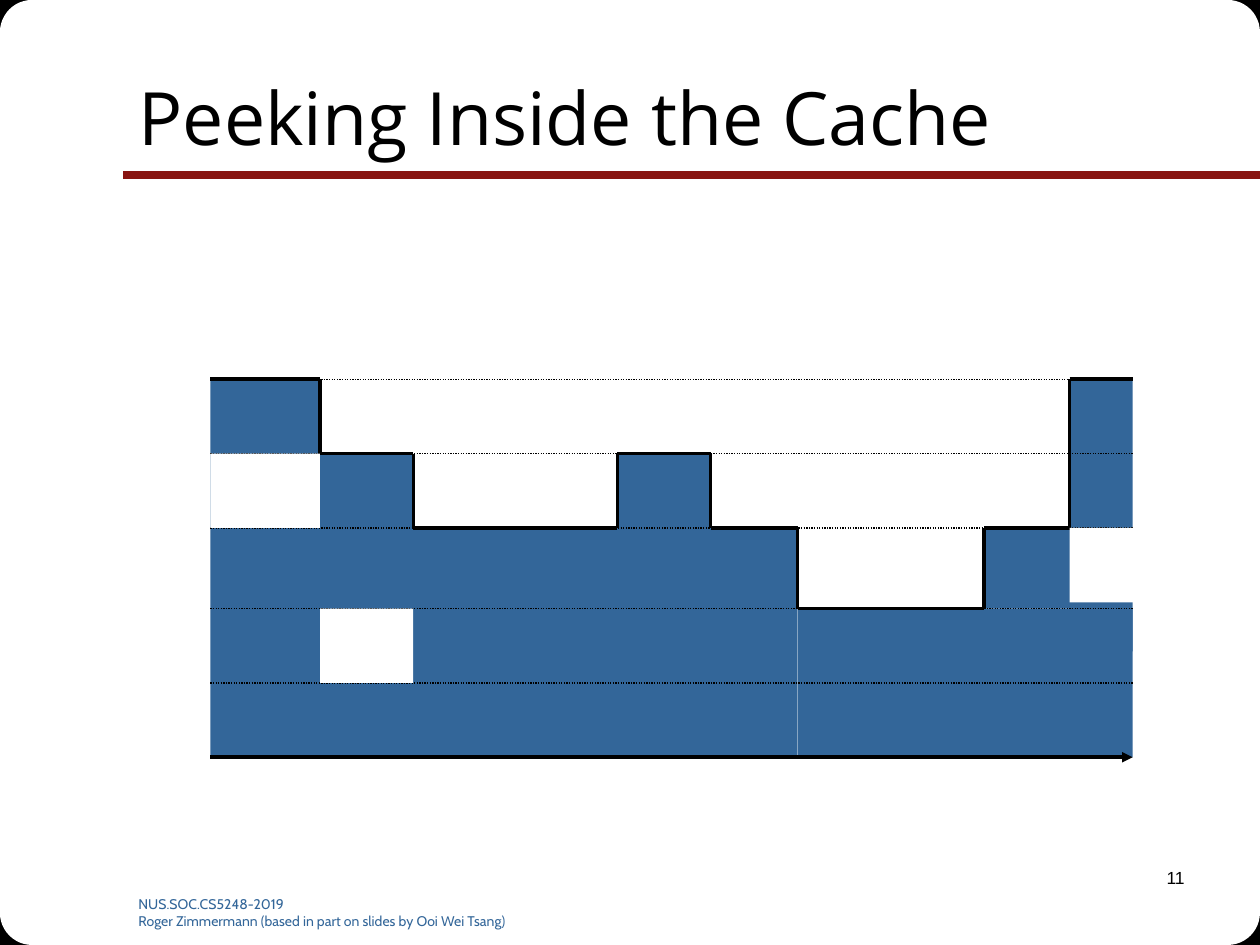
from itertools import pairwise

from lxml.etree import SubElement
from pptx import Presentation
from pptx.dml.color import RGBColor
from pptx.enum.dml import MSO_LINE
from pptx.enum.shapes import MSO_CONNECTOR, MSO_SHAPE
from pptx.enum.text import MSO_ANCHOR, MSO_AUTO_SIZE, PP_ALIGN
from pptx.oxml.ns import qn
from pptx.util import Inches, Pt

BLACK, WHITE, BLUE, RED = "000000", "FFFFFF", "336699", "891411"

presentation = Presentation()
presentation.slide_width = Inches(10)
presentation.slide_height = Inches(7.5)
slide = presentation.slides.add_slide(presentation.slide_layouts[5])


def add_block(shapes, left, top, width, height, color, kind=MSO_SHAPE.RECTANGLE):
    shape = shapes.add_shape(kind, Inches(left), Inches(top), Inches(width), Inches(height))
    shape.shadow.inherit = False
    shape.fill.solid()
    shape.fill.fore_color.rgb = RGBColor.from_string(color)
    shape.line.fill.background()
    return shape


def add_line(shapes, start, end, width, color=BLACK):
    connector = shapes.add_connector(
        MSO_CONNECTOR.STRAIGHT, *(Inches(value) for value in (*start, *end)))
    connector.line.width = Pt(width)
    connector.line.color.rgb = RGBColor.from_string(color)
    SubElement(connector._element.spPr, qn("a:effectLst"))
    return connector


# Black corners, rounded off by white squares
corners = slide.shapes.add_group_shape().shapes
for size, color, kind in ((0.43, BLACK, MSO_SHAPE.RECTANGLE),
                          (1.53, WHITE, MSO_SHAPE.ROUNDED_RECTANGLE)):
    for left in (0, 10 - size):
        for top in (0, 7.5 - size):
            add_block(corners, left, top, size, size, color, kind)

# Title with its rule, in front of the corners
add_line(slide.shapes, (10, 1.39), (0.98, 1.39), 4.5, RED)
title = slide.shapes.title
title.element.getparent().append(title.element)
title.left, title.top = Inches(1), Inches(0.3)
title.width, title.height = Inches(8.5), Inches(1.25)
title.text_frame.text = "Peeking Inside the Cache"
title.text_frame.vertical_anchor = MSO_ANCHOR.MIDDLE
title.text_frame.auto_size = MSO_AUTO_SIZE.NONE

# Footer and slide number
footer = slide.shapes.add_textbox(Inches(1), Inches(7.06), Inches(3.67), Inches(0.28))
footer.text_frame.text = ("NUS.SOC.CS5248-2019\n"
                          "Roger Zimmermann (based in part on slides by Ooi Wei Tsang)")
number = slide.shapes.add_textbox(Inches(7.42), Inches(6.83), Inches(2.08), Inches(0.5))
number.text_frame.text = "11"

for shape, font_name, size, color, alignment in (
        (title, "Open Sans", 42, BLACK, PP_ALIGN.LEFT),
        (footer, "Cabin", 8, BLUE, PP_ALIGN.LEFT),
        (number, "Arial", 10, BLACK, PP_ALIGN.RIGHT)):
    shape.text_frame.word_wrap = True
    for paragraph in shape.text_frame.paragraphs:
        paragraph.alignment = alignment
        paragraph.font.name = font_name
        paragraph.font.size = Pt(size)
        paragraph.font.color.rgb = RGBColor.from_string(color)

# Cached data
cache = slide.shapes.add_group_shape().shapes
LEFT, RIGHT = 1.67, 8.99
LEVELS = (3.01, 3.6, 4.19, 4.83, 5.42)
BOTTOM = 6.01
for left, top, right, bottom in (
        (LEFT, 4.19, 6.33, BOTTOM), (6.33, 4.83, RIGHT, BOTTOM),
        (LEFT, 3.01, 2.54, 4.19), (2.54, 3.6, 3.28, 4.19),
        (4.9, 3.6, 5.64, 4.19), (7.81, 4.19, 8.55, 4.83),
        (8.49, 3.01, RIGHT, 5.17)):
    add_block(cache, left, top, right - left, bottom - top, BLUE)

# Time axis and dotted layer levels
axis = add_line(cache, (LEFT, BOTTOM), (RIGHT, BOTTOM), 2)
SubElement(axis.line._get_or_add_ln(), qn("a:tailEnd"), type="triangle")
for level in LEVELS:
    grid_line = add_line(cache, (LEFT, level), (RIGHT, level), 0.75)
    grid_line.line.dash_style = MSO_LINE.ROUND_DOT

# Stepped outline of the received layers
outline = ((LEFT, 3.01), (2.54, 3.01), (2.54, 3.6), (3.28, 3.6), (3.28, 4.19),
           (4.11, 4.19), (4.9, 4.19), (4.9, 3.6), (5.64, 3.6), (5.64, 4.19),
           (6.33, 4.19), (6.33, 4.83), (7.81, 4.83), (7.81, 4.19),
           (8.49, 4.19), (8.49, 3.01), (RIGHT, 3.01))
for start, end in pairwise(outline):
    add_line(cache, start, end, 2)

# Missing segments
for left, top, width in ((2.54, 4.83, 0.74), (8.49, 4.19, 0.74), (LEFT, 3.6, 0.87)):
    add_block(cache, left, top, width, 0.59, WHITE)

presentation.save("out.pptx")
